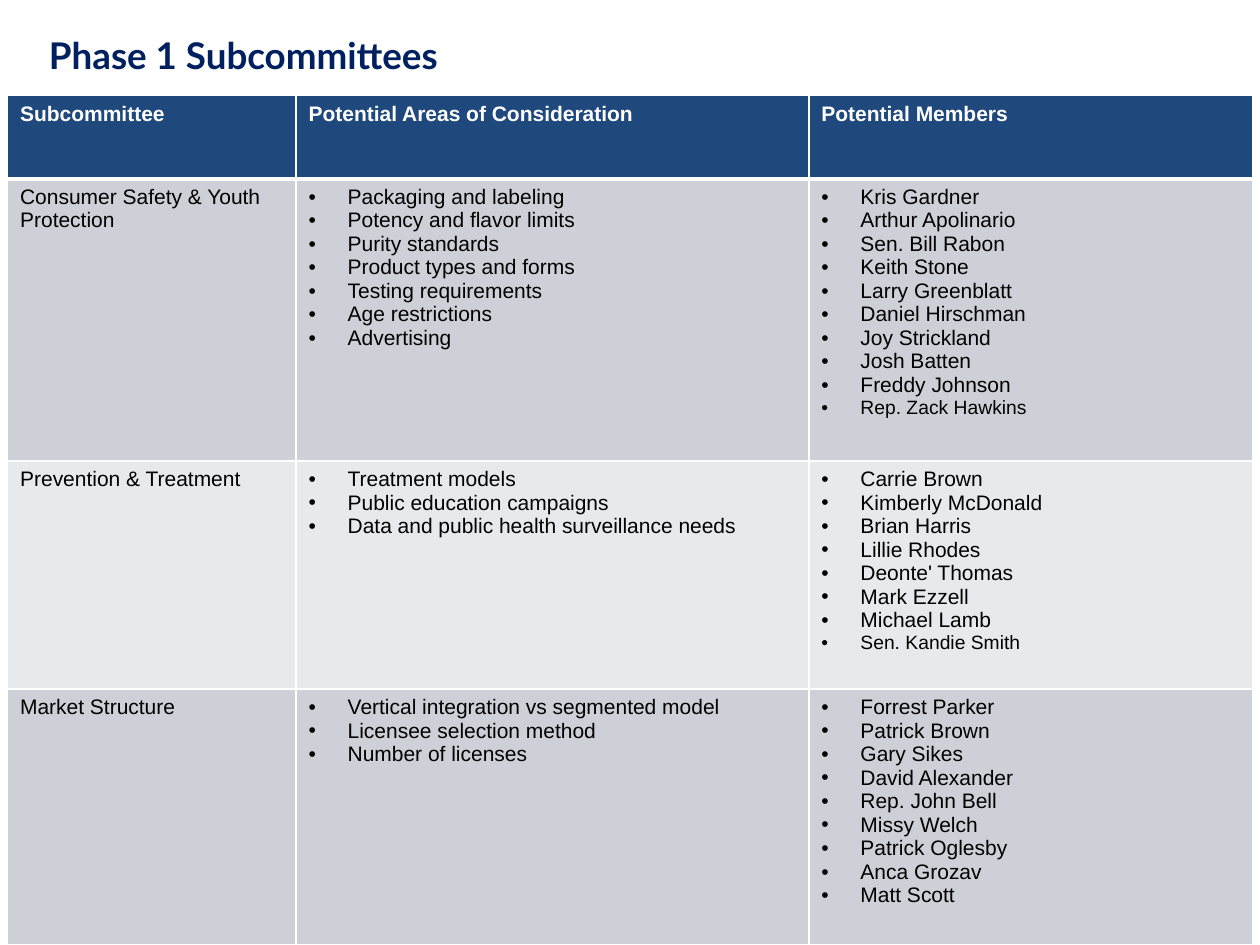
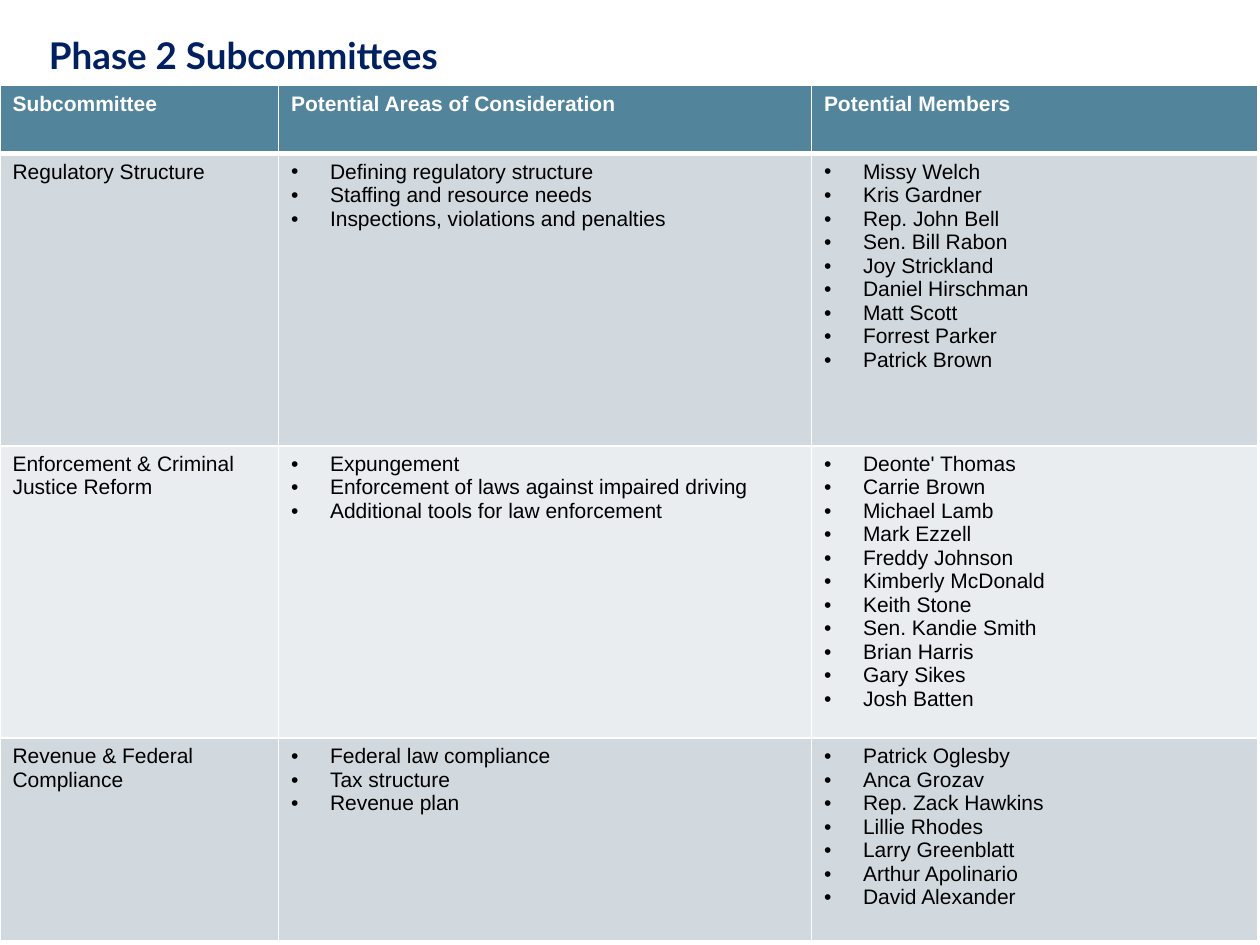
"""Build the two subcommittee slides, one table per phase."""
from lxml.etree import SubElement
from pptx import Presentation
from pptx.dml.color import RGBColor as RGB
from pptx.enum.shapes import MSO_CONNECTOR as Connector
from pptx.enum.text import MSO_ANCHOR as Anchor
from pptx.oxml.ns import qn
from pptx.util import Inches, Pt

NAVY = RGB(0x00, 0x20, 0x60)
RULE_BLUE = RGB(0x01, 0x43, 0x74)
WHITE = RGB(0xFF, 0xFF, 0xFF)
BLACK = RGB(0x00, 0x00, 0x00)
BLUE = RGB(0x1F, 0x49, 0x7D)
BLUE_BANDS = (RGB(0xCD, 0xD0, 0xD7), RGB(0xE8, 0xE9, 0xEC))
TEAL = RGB(0x52, 0x84, 0x9C)
TEAL_BANDS = (RGB(0xD1, 0xD9, 0xDE), RGB(0xE9, 0xED, 0xEF))

HEADINGS = ("Subcommittee", "Potential Areas of Consideration", "Potential Members")
INDENT = Inches(0.31)

PHASES = [
    {
        "title": "Phase 1 Subcommittees",
        "corner": (0.06, 0.76),
        "widths": (2.29, 4.07, 3.52),
        "heights": (0.66, 2.24, 1.81, 2.03),
        "heading_fill": BLUE,
        "bands": BLUE_BANDS,
        "smaller": ("Rep. Zack Hawkins", "Sen. Kandie Smith"),
        "subcommittees": [
            ("Consumer Safety & Youth Protection",
             ["Packaging and labeling", "Potency and flavor limits", "Purity standards",
              "Product types and forms", "Testing requirements", "Age restrictions",
              "Advertising"],
             ["Kris Gardner", "Arthur Apolinario", "Sen. Bill Rabon", "Keith Stone",
              "Larry Greenblatt", "Daniel Hirschman", "Joy Strickland", "Josh Batten",
              "Freddy Johnson", "Rep. Zack Hawkins"]),
            ("Prevention & Treatment",
             ["Treatment models", "Public education campaigns",
              "Data and public health surveillance needs"],
             ["Carrie Brown", "Kimberly McDonald", "Brian Harris", "Lillie Rhodes",
              "Deonte' Thomas", "Mark Ezzell", "Michael Lamb", "Sen. Kandie Smith"]),
            ("Market Structure",
             ["Vertical integration vs segmented model", "Licensee selection method",
              "Number of licenses"],
             ["Forrest Parker", "Patrick Brown", "Gary Sikes", "David Alexander",
              "Rep. John Bell", "Missy Welch", "Patrick Oglesby", "Anca Grozav",
              "Matt Scott"]),
        ],
    },
    {
        "title": "Phase 2 Subcommittees",
        "corner": (0, 0.68),
        "widths": (2.21, 4.23, 3.54),
        "heights": (0.54, 2.32, 2.32, 1.61),
        "heading_fill": TEAL,
        "bands": TEAL_BANDS,
        "smaller": (),
        "subcommittees": [
            ("Regulatory Structure",
             ["Defining regulatory structure", "Staffing and resource needs",
              "Inspections, violations and penalties"],
             ["Missy Welch", "Kris Gardner", "Rep. John Bell", "Sen. Bill Rabon",
              "Joy Strickland", "Daniel Hirschman", "Matt Scott", "Forrest Parker",
              "Patrick Brown"]),
            ("Enforcement & Criminal Justice Reform",
             ["Expungement", "Enforcement of laws against impaired driving",
              "Additional tools for law enforcement"],
             ["Deonte' Thomas", "Carrie Brown", "Michael Lamb", "Mark Ezzell",
              "Freddy Johnson", "Kimberly McDonald", "Keith Stone", "Sen. Kandie Smith",
              "Brian Harris", "Gary Sikes", "Josh Batten"]),
            ("Revenue & Federal Compliance",
             ["Federal law compliance", "Tax structure", "Revenue plan"],
             ["Patrick Oglesby", "Anca Grozav", "Rep. Zack Hawkins", "Lillie Rhodes",
              "Larry Greenblatt", "Arthur Apolinario", "David Alexander"]),
        ],
    },
]


def write(frame, content, size=12, font="Arial", color=BLACK, bold=False,
          spacing=None, smaller=()):
    bulleted = isinstance(content, list)
    for index, line in enumerate(content if bulleted else [content]):
        paragraph = frame.add_paragraph() if index else frame.paragraphs[0]
        if spacing:
            paragraph.line_spacing = spacing
        run = paragraph.add_run()
        run.text = line
        run.font.name = font
        run.font.size = Pt(11 if line in smaller else size)
        run.font.bold = bold
        run.font.color.rgb = color
        if bulleted:
            properties = paragraph._p.get_or_add_pPr()
            properties.set("marL", str(INDENT))
            properties.set("indent", str(-INDENT))
            SubElement(properties, qn("a:buFont")).set("typeface", "Arial")
            SubElement(properties, qn("a:buChar")).set("char", "•")


def paint(cell, fill, top=1, bottom=1):
    properties = cell._tc.get_or_add_tcPr()
    for side, points in (("L", 1), ("R", 1), ("T", top), ("B", bottom)):
        border = SubElement(properties, qn(f"a:ln{side}"), w=str(Pt(points)))
        solid = SubElement(border, qn("a:solidFill"))
        SubElement(solid, qn("a:srgbClr"), val=str(WHITE))
    cell.fill.solid()
    cell.fill.fore_color.rgb = fill


def add_title(slide, title):
    rule = slide.shapes.add_connector(
        Connector.STRAIGHT, Inches(0.29), Inches(0.78), Inches(9.7), Inches(0.78))
    rule.line.color.rgb = RULE_BLUE
    rule.line.width = Pt(2.25)
    SubElement(rule._element.spPr, qn("a:effectLst"))
    box = slide.shapes.add_textbox(Inches(0.29), Inches(0.13), Inches(10.02), Inches(0.65))
    box.text_frame.word_wrap = True
    box.text_frame.vertical_anchor = Anchor.MIDDLE
    write(box.text_frame, title, size=21, font="Lato", color=NAVY, bold=True, spacing=0.9)


def add_subcommittees(slide, phase):
    widths, heights = phase["widths"], phase["heights"]
    left, top = phase["corner"]
    table = slide.shapes.add_table(
        len(heights), len(widths), Inches(left), Inches(top),
        Inches(sum(widths)), Inches(sum(heights))).table
    for column, width in zip(table.columns, widths):
        column.width = Inches(width)
    for row, height in zip(table.rows, heights):
        row.height = Inches(height)

    for column, heading in enumerate(HEADINGS):
        cell = table.cell(0, column)
        paint(cell, phase["heading_fill"], bottom=3)
        write(cell.text_frame, heading, color=WHITE, bold=True)
    for row, subcommittee in enumerate(phase["subcommittees"], 1):
        for column, content in enumerate(subcommittee):
            cell = table.cell(row, column)
            paint(cell, phase["bands"][(row - 1) % 2], top=3 if row == 1 else 1)
            write(cell.text_frame, content, smaller=phase["smaller"])


def main():
    deck = Presentation()
    deck.slide_width, deck.slide_height = Inches(10), Inches(7.5)
    for phase in PHASES:
        slide = deck.slides.add_slide(deck.slide_layouts[6])
        add_title(slide, phase["title"])
        add_subcommittees(slide, phase)
    deck.save("out.pptx")


if __name__ == "__main__":
    main()
